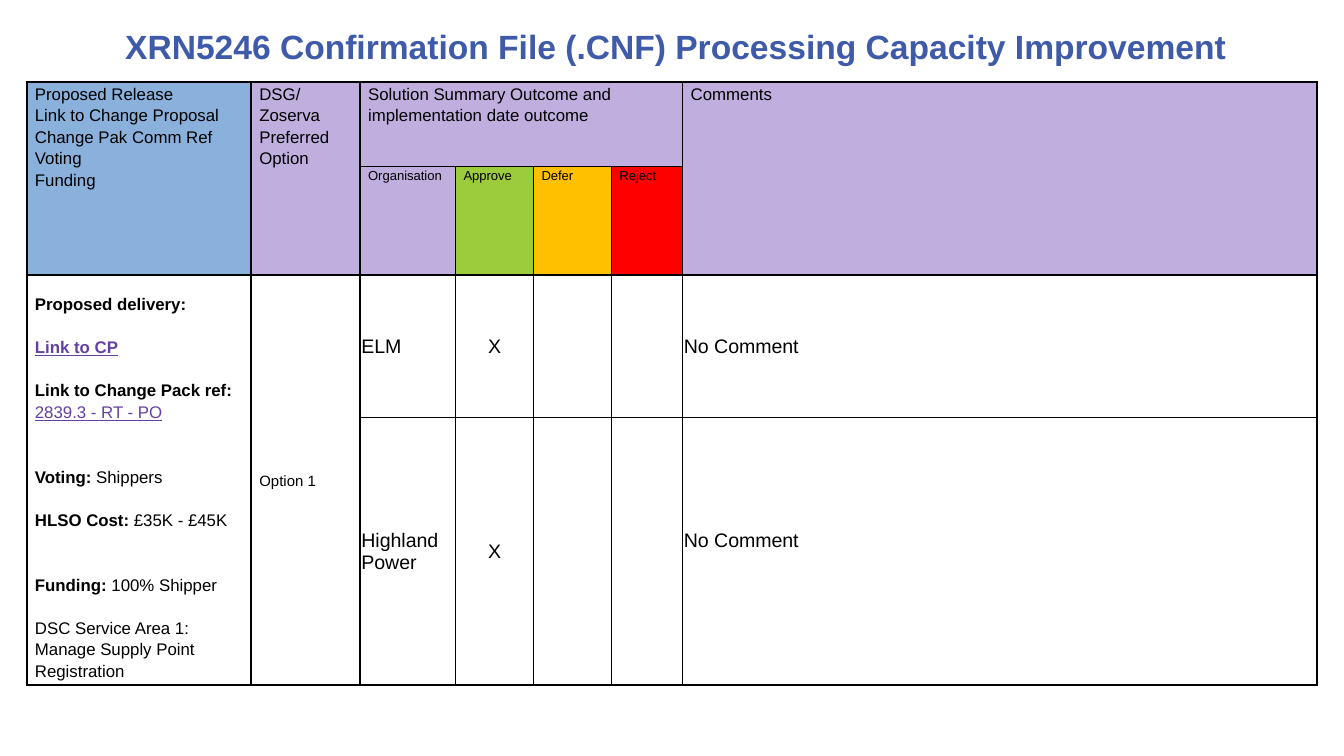
from dataclasses import dataclass

from lxml.etree import SubElement
from pptx import Presentation
from pptx.dml.color import RGBColor
from pptx.enum.text import MSO_ANCHOR as Anchor, MSO_AUTO_SIZE as AutoSize, PP_ALIGN as Align
from pptx.oxml.ns import qn
from pptx.util import Inches, Pt


@dataclass(frozen=True)
class Theme:
    """Colours, type sizes and spacing of the slide."""
    font: str = "Arial"
    title: str = "3E5AA8"
    ink: str = "000000"
    link: str = "6440A3"
    blue: str = "89B1DC"
    lilac: str = "C0AEDF"
    green: str = "9CCB3B"
    amber: str = "FFC000"
    red: str = "FF0000"
    title_size: float = 18
    vote_size: float = 10.5
    body_size: float = 9
    option_size: float = 8
    label_size: float = 7
    line_spacing: float = 1.15
    line_height: float = 11.55
    border: float = 1


THEME = Theme()
COLUMNS = (1.67, 0.81, 0.71, 0.58, 0.58, 0.53, 4.72)
ROWS = (0.63, 0.8, 1.06, 1.99)
SPANS = (((0, 0), (1, 0)), ((0, 1), (1, 1)), ((0, 2), (0, 5)),
         ((0, 6), (1, 6)), ((2, 0), (3, 0)), ((2, 1), (3, 1)))
TEXT_INSETS = (0.06, 0, 0.06, 0)
VOTE_INSETS = (0.01, 0.01, 0.01, 0)

HEADERS = (
    (0, 0, THEME.blue, ("Proposed Release", "Link to Change Proposal",
                        "Change Pak Comm Ref", "Voting", "Funding")),
    (0, 1, THEME.lilac, ("DSG/ Zoserva Preferred Option",)),
    (0, 2, THEME.lilac, ("Solution Summary Outcome and implementation date outcome",)),
    (0, 6, THEME.lilac, ("Comments",)),
)
LABELS = (("Organisation", THEME.lilac), ("Approve", THEME.green),
          ("Defer", THEME.amber), ("Reject", THEME.red))
DETAILS = (
    (0, (("Proposed delivery:", "bold"),)),
    (1, (("Link to CP", "bold link"),)),
    (1, (("Link to Change Pack ref: ", "bold"), ("2839.3 - RT - PO", "link"))),
    (2, (("Voting: ", "bold"), ("Shippers", ""))),
    (1, (("HLSO Cost: ", "bold"), ("£35K - £45K", ""))),
    (2, (("Funding:", "bold"), (" 100% Shipper", ""))),
    (1, (("DSC Service Area 1: Manage Supply Point Registration", ""),)),
)
VOTES = (("ELM", "No Comment", 0), ("Highland Power", "No Comment", 0.16))


def set_font(font, size, color=THEME.ink):
    """Apply the slide's typeface with a size and a colour."""
    font.name = THEME.font
    font.size = Pt(size)
    font.color.rgb = RGBColor.from_string(color)


def add_title(slide, text):
    """Place and format the title placeholder."""
    title = slide.shapes.title
    title.left, title.top = Inches(0.13), Inches(0.16)
    title.width, title.height = Inches(9.8), Inches(0.36)
    frame = title.text_frame
    frame.text = text
    frame.auto_size = AutoSize.NONE
    frame.vertical_anchor = Anchor.MIDDLE
    paragraph = frame.paragraphs[0]
    paragraph.alignment = Align.CENTER
    set_font(paragraph.font, THEME.title_size, THEME.title)
    paragraph.font.bold = True


def add_borders(cell):
    """Draw a solid line on all four sides of a cell."""
    properties = cell._tc.get_or_add_tcPr()
    for side in ("lnL", "lnR", "lnT", "lnB"):
        line = SubElement(properties, qn(f"a:{side}"), w=str(Pt(THEME.border)))
        fill = SubElement(line, qn("a:solidFill"))
        SubElement(fill, qn("a:srgbClr"), val=THEME.ink)


def add_grid(slide):
    """Add the bordered table with its merged cells."""
    frame = slide.shapes.add_table(len(ROWS), len(COLUMNS), Inches(0.2), Inches(0.61),
                                   Inches(sum(COLUMNS)), Inches(sum(ROWS)))
    table = frame.table
    table.first_row = table.horz_banding = False
    for column, width in zip(table.columns, COLUMNS):
        column.width = Inches(width)
    for row, height in zip(table.rows, ROWS):
        row.height = Inches(height)
    for cell in table.iter_cells():
        add_borders(cell)
        cell.fill.background()
    for start, end in SPANS:
        table.cell(*start).merge(table.cell(*end))
    return table


def format_cell(cell, insets=TEXT_INSETS, anchor=Anchor.TOP, fill=None):
    """Set the insets, anchor and fill of a cell."""
    cell.margin_left, cell.margin_top, cell.margin_right, cell.margin_bottom = map(Inches, insets)
    cell.vertical_anchor = anchor
    if fill:
        cell.fill.solid()
        cell.fill.fore_color.rgb = RGBColor.from_string(fill)


def write_lines(cell, lines, size, spacing=THEME.line_spacing, align=Align.LEFT):
    """Write plain paragraphs of one size into a cell."""
    cell.text = "\n".join(lines)
    for paragraph in cell.text_frame.paragraphs:
        paragraph.alignment = align
        paragraph.line_spacing = spacing
        set_font(paragraph.font, size)


def write_details(cell):
    """Write the change details with bold labels and links."""
    frame = cell.text_frame
    for index, (gap_lines, runs) in enumerate(DETAILS):
        paragraph = frame.add_paragraph() if index else frame.paragraphs[0]
        paragraph.line_spacing = THEME.line_spacing
        if gap_lines:
            paragraph.space_before = Pt(gap_lines * THEME.line_height)
        set_font(paragraph.font, THEME.body_size)
        for text, style in runs:
            run = paragraph.add_run()
            run.text = text
            run.font.bold = "bold" in style
            if "link" in style:
                run.font.underline = True
                run.font.color.rgb = RGBColor.from_string(THEME.link)


def fill_headers(table):
    """Fill the two heading rows."""
    for row, column, color, lines in HEADERS:
        cell = table.cell(row, column)
        format_cell(cell, fill=color)
        write_lines(cell, lines, THEME.body_size)
    for column, (label, color) in enumerate(LABELS, start=2):
        cell = table.cell(1, column)
        format_cell(cell, fill=color)
        write_lines(cell, (label,), THEME.label_size)


def fill_votes(table):
    """Fill one row for each organisation that voted."""
    for row, (organisation, comment, lift) in enumerate(VOTES, start=2):
        entries = ((2, organisation, Align.LEFT, 0), (3, "X", Align.CENTER, 0),
                   (6, comment, Align.LEFT, lift))
        for column, text, align, bottom in entries:
            cell = table.cell(row, column)
            format_cell(cell, (*VOTE_INSETS[:3], bottom), Anchor.MIDDLE)
            write_lines(cell, (text,), THEME.vote_size, 1.0, align)


def main():
    """Build and save the slide."""
    presentation = Presentation()
    presentation.slide_width = Inches(10)
    presentation.slide_height = presentation.slide_width * 9 // 16
    slide = presentation.slides.add_slide(presentation.slide_layouts[5])
    add_title(slide, "XRN5246 Confirmation File (.CNF) Processing Capacity Improvement")
    table = add_grid(slide)
    fill_headers(table)
    details, option = table.cell(2, 0), table.cell(2, 1)
    format_cell(details, (0.06, 0.13, 0.06, 0))
    write_details(details)
    format_cell(option, anchor=Anchor.MIDDLE)
    write_lines(option, ("Option 1",), THEME.option_size)
    fill_votes(table)
    presentation.save("out.pptx")


if __name__ == "__main__":
    main()
